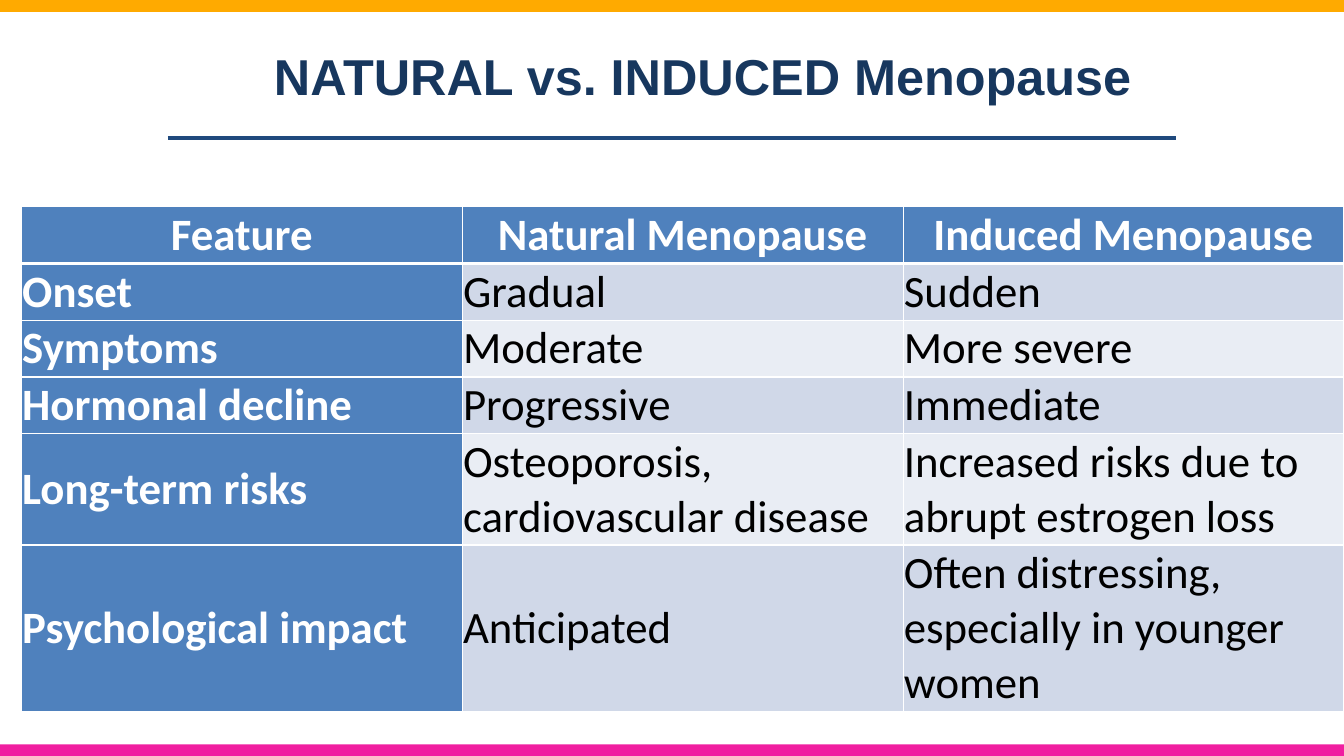
from dataclasses import dataclass

from lxml.etree import SubElement
from pptx import Presentation
from pptx.dml.color import RGBColor
from pptx.enum.shapes import MSO_CONNECTOR as Link, MSO_SHAPE as Shape
from pptx.enum.text import MSO_ANCHOR as Anchor, MSO_AUTO_SIZE as Fit, PP_ALIGN as Align
from pptx.oxml.ns import qn
from pptx.util import Cm, Pt

WHITE = RGBColor(0xFF, 0xFF, 0xFF)
BLACK = RGBColor(0, 0, 0)
AMBER = RGBColor(0xFF, 0xAA, 0x00)
PINK = RGBColor(0xF0, 0x1E, 0xA0)
NAVY = RGBColor(0x17, 0x37, 0x5E)
RULE = RGBColor(0x1F, 0x49, 0x7D)
BLUE = RGBColor(0x4F, 0x81, 0xBD)
DARK = RGBColor(0xD0, 0xD8, 0xE8)
PALE = RGBColor(0xE9, 0xED, 0xF4)

WIDTH = 33.87
COLUMN = 11.11


@dataclass
class Band:
    top: float
    color: RGBColor


@dataclass
class Row:
    height: float
    texts: tuple[str, str, str]


BANDS = [Band(0, AMBER), Band(18.76, PINK)]
ROWS = [
    Row(1.43, ("Feature", "Natural Menopause", "Induced Menopause")),
    Row(1.43, ("Onset", "Gradual", "Sudden")),
    Row(1.43, ("Symptoms", "Moderate", "More severe")),
    Row(1.43, ("Hormonal decline", "Progressive", "Immediate")),
    Row(2.79, ("Long-term risks", "Osteoporosis, cardiovascular disease",
               "Increased risks due to abrupt estrogen loss")),
    Row(4.2, ("Psychological impact", "Anticipated",
              "Often distressing, especially in younger women")),
]


def add_band(slide, band: Band) -> None:
    bar = slide.shapes.add_shape(Shape.RECTANGLE, 0, Cm(band.top), Cm(WIDTH), Cm(0.3))
    bar.shadow.inherit = False
    bar.fill.solid()
    bar.fill.fore_color.rgb = band.color
    bar.line.fill.background()


def set_font(para, name: str, size: int, color: RGBColor, bold: bool) -> None:
    font = para.font
    font.name, font.size, font.bold = name, Pt(size), bold
    font.color.rgb = color


def add_title(slide) -> None:
    title = slide.shapes.title
    title.left, title.top, title.width, title.height = Cm(2.18), Cm(0.84), Cm(31.42), Cm(3.18)
    frame = title.text_frame
    frame.text = "NATURAL vs. INDUCED Menopause "
    frame.auto_size = Fit.NONE
    frame.vertical_anchor = Anchor.TOP
    frame.margin_top = Cm(0.3)
    para = frame.paragraphs[0]
    para.alignment = Align.CENTER
    set_font(para, "Arial", 36, NAVY, True)


def add_rule(slide) -> None:
    rule = slide.shapes.add_connector(Link.STRAIGHT, Cm(4.23), Cm(3.47), Cm(29.63), Cm(3.47))
    rule.line.color.rgb = RULE
    rule.line.width = Pt(2.88)
    SubElement(rule._element.spPr, qn("a:effectLst"))


def add_edges(cell, top: int, base: int) -> None:
    props = cell._tc.get_or_add_tcPr()
    for at, (side, width) in enumerate((("L", 1), ("R", 1), ("T", top), ("B", base))):
        edge = SubElement(props, qn(f"a:ln{side}"), w=str(Pt(width)))
        fill = SubElement(edge, qn("a:solidFill"))
        SubElement(fill, qn("a:srgbClr"), val=str(WHITE))
        props.insert(at, edge)


def fill_cell(cell, text: str, row: int, col: int) -> None:
    head = row == 0 or col == 0
    cell.text = text
    cell.vertical_anchor = Anchor.MIDDLE
    cell.margin_left = cell.margin_right = cell.margin_top = cell.margin_bottom = Cm(0.02)
    cell.fill.solid()
    cell.fill.fore_color.rgb = BLUE if head else DARK if row % 2 else PALE
    para = cell.text_frame.paragraphs[0]
    para.alignment = Align.LEFT if row else Align.CENTER
    set_font(para, "Calibri", 32, WHITE if head else BLACK, head)
    add_edges(cell, 3 if row == 1 else 1, 1 if row else 3)


def add_grid(slide) -> None:
    high = sum(row.height for row in ROWS)
    grid = slide.shapes.add_table(len(ROWS), 3, Cm(0.54), Cm(5.21), Cm(3 * COLUMN), Cm(high)).table
    for col in grid.columns:
        col.width = Cm(COLUMN)
    for r, row in enumerate(ROWS):
        grid.rows[r].height = Cm(row.height)
        for c, text in enumerate(row.texts):
            fill_cell(grid.cell(r, c), text, r, c)


def main() -> None:
    deck = Presentation()
    deck.slide_width, deck.slide_height = Cm(WIDTH), Cm(19.05)
    slide = deck.slides.add_slide(deck.slide_layouts[5])
    for band in BANDS:
        add_band(slide, band)
    add_title(slide)
    add_grid(slide)
    add_rule(slide)
    deck.save("out.pptx")


if __name__ == "__main__":
    main()
